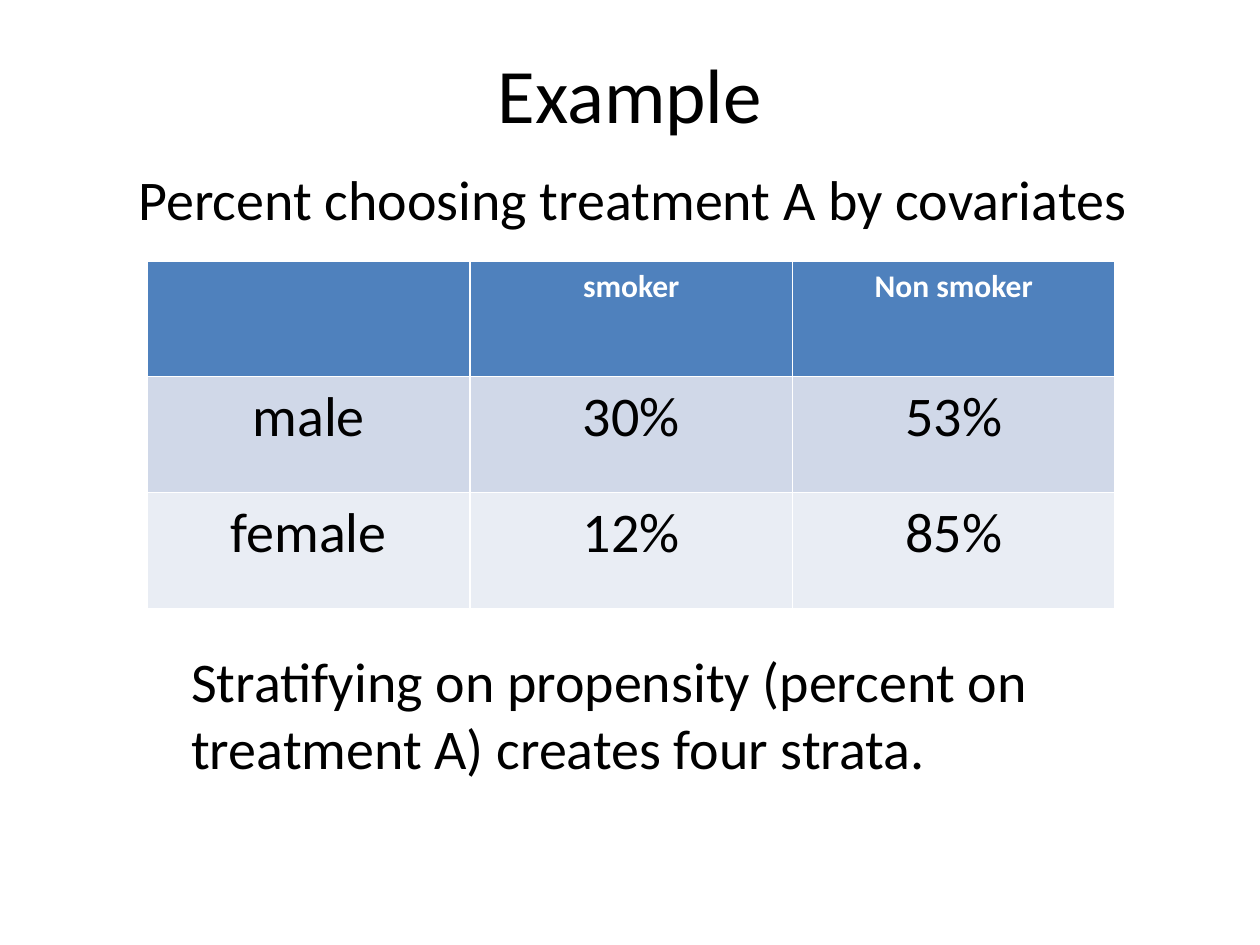
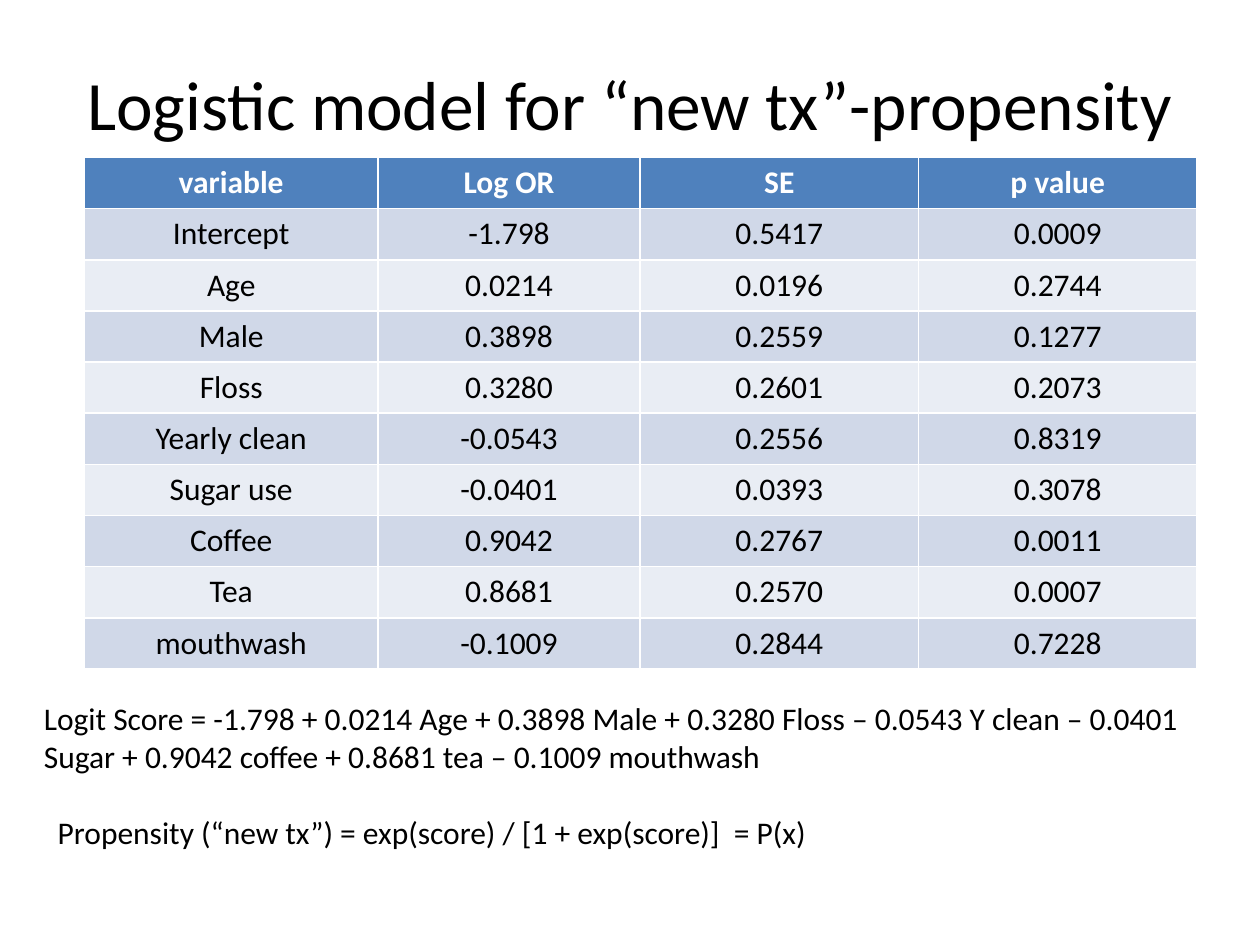
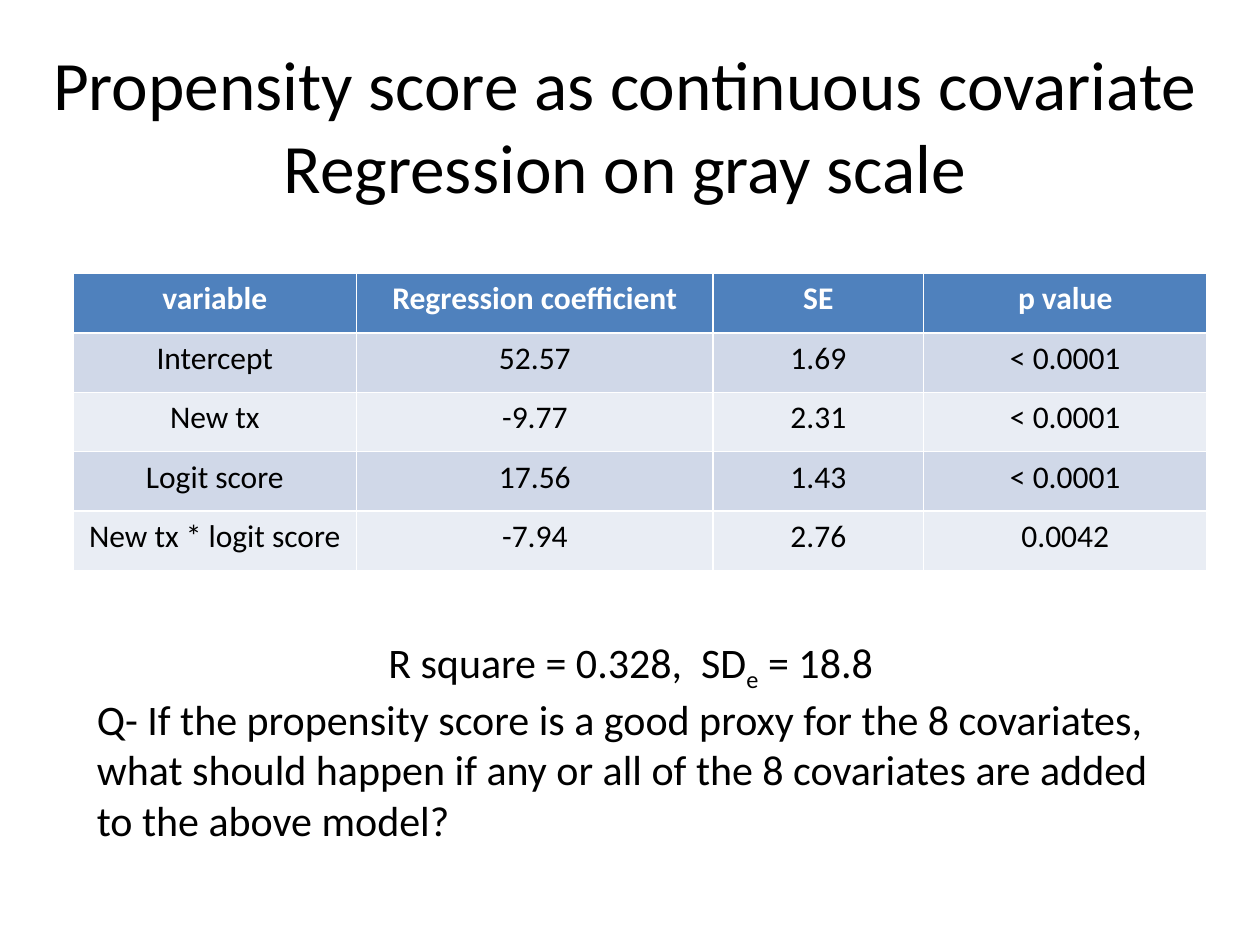
from pptx import Presentation
from pptx.dml.color import RGBColor
from pptx.enum.text import MSO_ANCHOR, MSO_AUTO_SIZE, PP_ALIGN
from pptx.util import Inches, Pt

FONT = "Calibri"
BLACK = RGBColor(0x00, 0x00, 0x00)
WHITE = RGBColor(0xFF, 0xFF, 0xFF)
HEADER_BLUE = RGBColor(0x4F, 0x81, 0xBD)
BAND_FILLS = (RGBColor(0xD0, 0xD8, 0xE8), RGBColor(0xE9, 0xED, 0xF4))
SLIDE_WIDTH, SLIDE_HEIGHT = 10, 7.5
TITLE_TOP = 0.3
CELL_SIZE = 18
SUBSCRIPT = "-25000"

# Boxes are left, top, width, height in inches. A paragraph is a dict of its
# runs and format; a run is a string or a (text, baseline) pair.
SLIDES = [
    {
        "title": {"runs": ["Example"], "left": 0.5, "height": 0.87, "size": 44},
        "table": {
            "left": 1.17, "top": 2.07, "height": 2.76,
            "columns": [2.56, 2.56, 2.56], "body_size": 32,
            "rows": [
                ("", "smoker", "Non smoker"),
                ("male", "30%", "53%"),
                ("female", "12%", "85%"),
            ],
        },
        "texts": [
            {"box": (1, 1.26, 8.25, 0.64), "size": 32, "paragraphs": [
                {"runs": ["Percent choosing treatment A by covariates"]},
            ]},
            {"box": (1.42, 5.08, 7.17, 1.18), "size": 32, "paragraphs": [
                {"runs": ["Stratifying on propensity (percent on treatment A) "
                          "creates four strata."]},
            ]},
        ],
    },
    {
        "title": {"runs": ["Logistic model for “new tx”-propensity"],
                  "left": 0.5, "height": 1.03, "size": 39.6},
        "table": {
            "left": 0.67, "top": 1.25, "height": 4.06,
            "columns": [2.33, 2.08, 2.21, 2.21], "body_size": CELL_SIZE,
            "rows": [
                ("variable", "Log OR", "SE", "p value"),
                ("Intercept", "-1.798", "0.5417", "0.0009"),
                ("Age", "0.0214", "0.0196", "0.2744"),
                ("Male", "0.3898", "0.2559", "0.1277"),
                ("Floss", "0.3280", "0.2601", "0.2073"),
                ("Yearly clean", "-0.0543", "0.2556", "0.8319"),
                ("Sugar use", "-0.0401", "0.0393", "0.3078"),
                ("Coffee", "0.9042", "0.2767", "0.0011"),
                ("Tea", "0.8681", "0.2570", "0.0007"),
                ("mouthwash", "-0.1009", "0.2844", "0.7228"),
            ],
        },
        "texts": [
            {"box": (0.25, 5.5, 9.5, 1.31), "size": 18, "paragraphs": [
                {"runs": ["Logit Score = -1.798 + 0.0214 Age + 0.3898 Male + 0.3280 Floss "
                          "– 0.0543 Y clean – 0.0401 Sugar + 0.9042 coffee + 0.8681 tea "
                          "– 0.1009 mouthwash"]},
                {"runs": ["Propensity (“new tx”) = exp(score) / [1 + exp(score)]  = P(x)"],
                 "space_before": 22, "indent": 0.11},
            ]},
        ],
    },
    {
        "title": {"runs": ["Propensity score as continuous covariate", "\n",
                           "Regression on gray scale"],
                  "left": 0.17, "width": 9.58, "height": 1.37, "size": 39.6},
        "table": {
            "left": 0.58, "top": 2.17, "height": 2.36,
            "columns": [2.25, 2.83, 1.67, 2.25], "body_size": CELL_SIZE,
            "rows": [
                ("variable", "Regression coefficient", "SE", "p value"),
                ("Intercept", "52.57", "1.69", "< 0.0001"),
                ("New tx", "-9.77", "2.31", "< 0.0001"),
                ("Logit score", "17.56", "1.43", "< 0.0001"),
                ("New tx * logit score", "-7.94", "2.76", "0.0042"),
            ],
        },
        "texts": [
            {"box": (0.67, 5, 8.67, 1.72), "size": 24, "paragraphs": [
                {"runs": ["R square = 0.328,  SD", ("e", SUBSCRIPT), " = 18.8"],
                 "align": PP_ALIGN.CENTER},
                {"runs": ["Q- If the propensity score is a good proxy for the 8 covariates, "
                          "what should happen if any or all of the 8 covariates are added "
                          "to the above model?"]},
            ]},
        ],
    },
]


def write_paragraph(paragraph, runs, size, color=BLACK, bold=False,
                    align=PP_ALIGN.LEFT, space_before=0, indent=0):
    paragraph.alignment = align
    paragraph.space_before = Pt(space_before)
    if indent:
        paragraph._p.get_or_add_pPr().set("marL", str(Inches(indent)))
    for item in runs:
        if item == "\n":
            paragraph.add_line_break()
            continue
        text, baseline = (item, None) if isinstance(item, str) else item
        run = paragraph.add_run()
        run.text = text
        run.font.name = FONT
        run.font.size = Pt(size)
        run.font.bold = bold
        run.font.color.rgb = color
        if baseline:
            run._r.get_or_add_rPr().set("baseline", baseline)


def add_text(slide, box, paragraphs, size, anchor=MSO_ANCHOR.TOP,
             auto_size=MSO_AUTO_SIZE.SHAPE_TO_FIT_TEXT):
    frame = slide.shapes.add_textbox(*map(Inches, box)).text_frame
    frame.word_wrap = True
    frame.auto_size = auto_size
    frame.vertical_anchor = anchor
    for index, content in enumerate(paragraphs):
        paragraph = frame.add_paragraph() if index else frame.paragraphs[0]
        write_paragraph(paragraph, size=size, **content)


def add_title(slide, runs, left, height, size, width=9):
    add_text(slide, (left, TITLE_TOP, width, height),
             [{"runs": runs, "align": PP_ALIGN.CENTER}], size,
             anchor=MSO_ANCHOR.MIDDLE, auto_size=MSO_AUTO_SIZE.NONE)


def add_banded_table(slide, left, top, height, columns, body_size, rows):
    """Add a table; its white rules come from the default table style."""
    box = map(Inches, (left, top, sum(columns), height))
    table = slide.shapes.add_table(len(rows), len(columns), *box).table
    for column, width in zip(table.columns, columns):
        column.width = Inches(width)
    for row_index, row in enumerate(rows):
        is_header = row_index == 0
        for column_index, text in enumerate(row):
            cell = table.cell(row_index, column_index)
            cell.fill.solid()
            cell.fill.fore_color.rgb = (
                HEADER_BLUE if is_header else BAND_FILLS[(row_index - 1) % 2])
            write_paragraph(cell.text_frame.paragraphs[0], [text] if text else [],
                            size=CELL_SIZE if is_header else body_size,
                            color=WHITE if is_header else BLACK,
                            bold=is_header, align=PP_ALIGN.CENTER)


def main():
    presentation = Presentation()
    presentation.slide_width = Inches(SLIDE_WIDTH)
    presentation.slide_height = Inches(SLIDE_HEIGHT)
    for content in SLIDES:
        slide = presentation.slides.add_slide(presentation.slide_layouts[6])
        add_title(slide, **content["title"])
        add_banded_table(slide, **content["table"])
        for text in content["texts"]:
            add_text(slide, **text)
    presentation.save("out.pptx")


if __name__ == "__main__":
    main()
